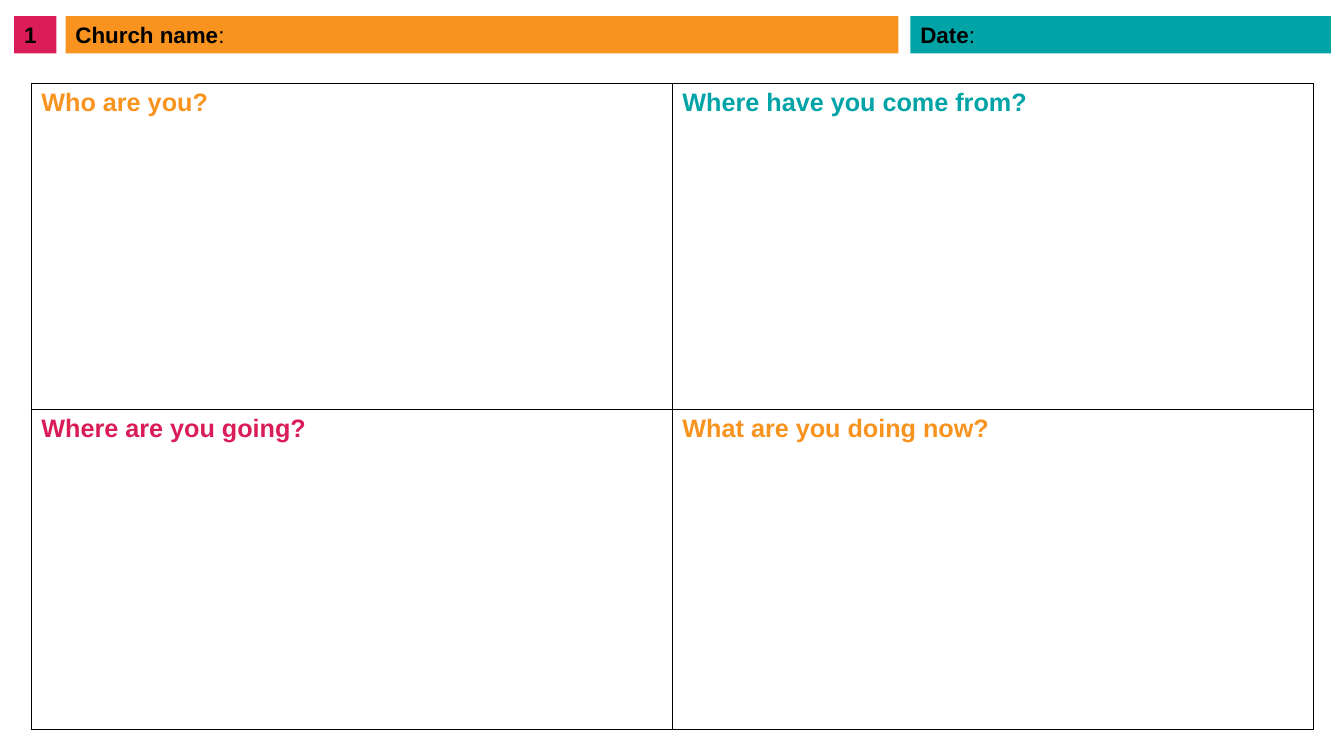
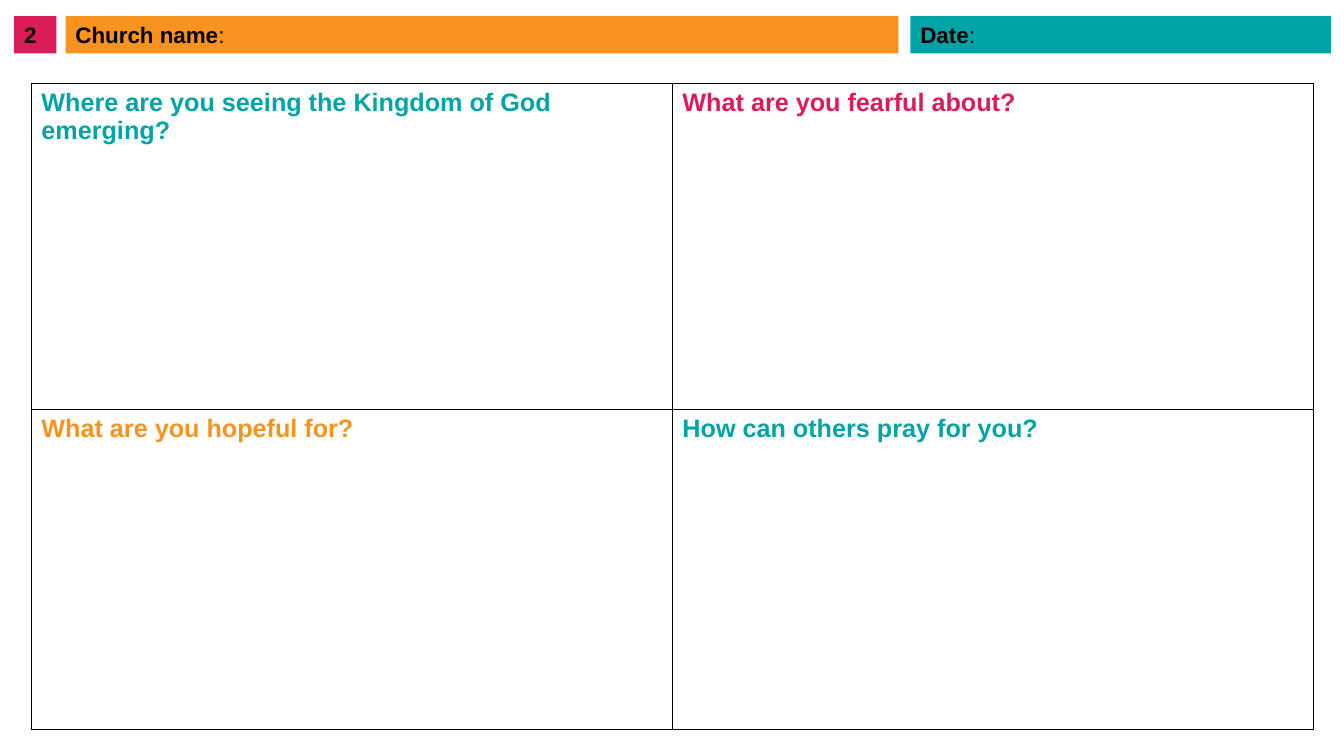
from dataclasses import dataclass
from itertools import cycle

from lxml import etree
from pptx import Presentation
from pptx import util as u
from pptx.dml.color import RGBColor
from pptx.enum import shapes, text
from pptx.oxml import ns


@dataclass(frozen=True)
class Theme:
    orange: str = "F7931E"
    teal: str = "00A3A6"
    pink: str = "DA1C59"
    ink: str = "000000"
    font: str = "Arial"
    band_size: int = 16
    question_size: int = 18
    border_width: float = 1


SHEETS = [
    ["Who are you?", "Where have you come from?",
     "Where are you going?", "What are you doing now?"],
    ["Where are you seeing the Kingdom of God emerging?",
     "What are you fearful about?",
     "What are you hopeful for?", "How can others pray for you?"],
]


class Worksheet:
    columns = rows = 100

    def __init__(self, theme):
        self.theme = theme
        self.deck = Presentation()
        self.deck.slide_width = u.Inches(13.33)
        self.deck.slide_height = u.Inches(7.5)
        self.page = None

    def x(self, columns):
        return round(self.deck.slide_width * columns / self.columns)

    def y(self, rows):
        return round(self.deck.slide_height * rows / self.rows)

    def add_page(self):
        self.page = self.deck.slides.add_slide(self.deck.slide_layouts[6])

    def style(self, para, size, colour):
        para.alignment = text.PP_ALIGN.LEFT
        para.font.name = self.theme.font
        para.font.size = u.Pt(size)
        para.font.bold = True
        para.font.color.rgb = RGBColor.from_string(colour)

    def band(self, left, width, colour, label, suffix=""):
        box = self.page.shapes.add_shape(
            shapes.MSO_SHAPE.RECTANGLE,
            self.x(left), self.y(2.13), self.x(width), self.y(4.93))
        box.shadow.inherit = False
        box.fill.solid()
        box.fill.fore_color.rgb = RGBColor.from_string(colour)
        box.line.fill.background()
        frame = box.text_frame
        frame.word_wrap = True
        frame.vertical_anchor = text.MSO_ANCHOR.TOP
        para = frame.paragraphs[0]
        self.style(para, self.theme.band_size, self.theme.ink)
        para.add_run().text = label
        if suffix:
            span = para.add_run()
            span.text = suffix
            span.font.bold = False

    def border(self, cell):
        properties = cell._tc.get_or_add_tcPr()
        for index, side in enumerate(("a:lnL", "a:lnR", "a:lnT", "a:lnB")):
            line = etree.Element(
                ns.qn(side), w=str(u.Pt(self.theme.border_width)))
            fill = etree.SubElement(line, ns.qn("a:solidFill"))
            etree.SubElement(fill, ns.qn("a:srgbClr"), val=self.theme.ink)
            properties.insert(index, line)

    def question_table(self, questions, colours):
        heights = [self.y(43.07), self.y(42.4)]
        table = self.page.shapes.add_table(
            2, 2, self.x(2.33), self.y(11.07),
            self.x(95.4), sum(heights)).table
        table.first_row = table.horz_banding = False
        for row, height in zip(table.rows, heights):
            row.height = height
        for cell, question in zip(table.iter_cells(), questions):
            cell.fill.background()
            self.border(cell)
            cell.text = question
            self.style(cell.text_frame.paragraphs[0],
                       self.theme.question_size, next(colours))


def main():
    theme = Theme()
    sheet = Worksheet(theme)
    colours = cycle((theme.orange, theme.teal, theme.pink))
    for number, questions in enumerate(SHEETS, start=1):
        sheet.add_page()
        sheet.question_table(questions, colours)
        sheet.band(4.88, 61.97, theme.orange, "Church name", ":")
        sheet.band(67.74, 31.28, theme.teal, "Date", ":")
        sheet.band(1.05, 3.15, theme.pink, str(number))
    sheet.deck.save("out.pptx")


if __name__ == "__main__":
    main()
